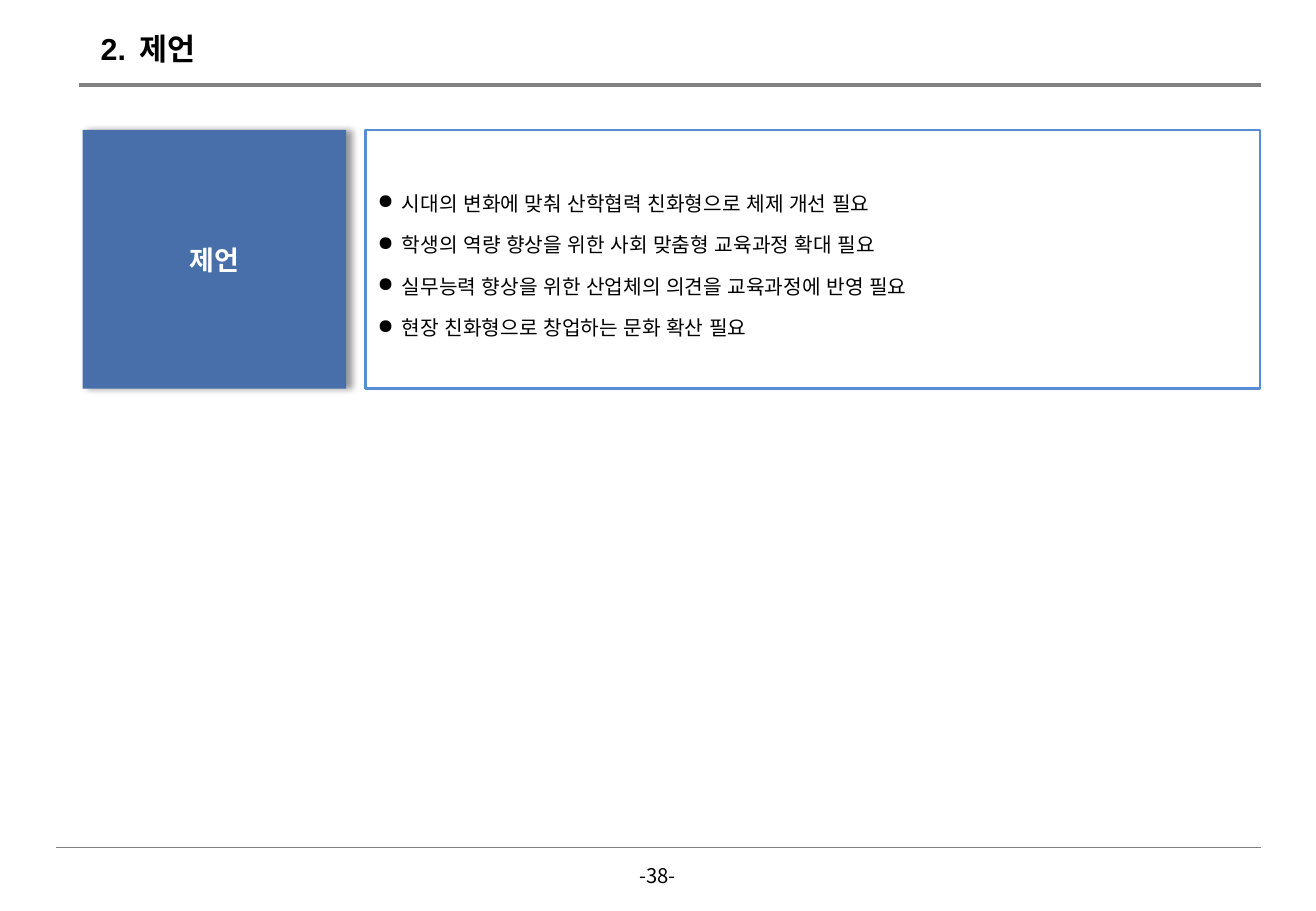
from lxml import etree
from pptx import Presentation
from pptx.dml.color import RGBColor
from pptx.enum.shapes import MSO_CONNECTOR as Line, MSO_SHAPE as Shape
from pptx.enum.text import MSO_ANCHOR as Anchor, PP_ALIGN as Align
from pptx.oxml.ns import qn
from pptx.util import Inches, Pt

BLACK = RGBColor(0, 0, 0)
WHITE = RGBColor(0xFF, 0xFF, 0xFF)
GRAY = RGBColor(0x80, 0x80, 0x80)
BLUE = RGBColor(0x48, 0x6F, 0xAA)
EDGE = RGBColor(0x55, 0x8E, 0xD5)
SANS = "Arial"
HANGUL = "Noto Sans CJK KR"
RIGHT = 10.38

POINTS = [
    "시대의 변화에 맞춰 산학협력 친화형으로 체제 개선 필요",
    "학생의 역량 향상을 위한 사회 맞춤형 교육과정 확대 필요",
    "실무능력 향상을 위한 산업체의 의견을 교육과정에 반영 필요",
    "현장 친화형으로 창업하는 문화 확산 필요",
]


def node(parent, tag, **attrs):
    return etree.SubElement(parent, qn(tag), attrs)


def write(frame, text, size=12, color=BLACK, bold=False, font=SANS,
          align=Align.LEFT, anchor=Anchor.TOP, bullet=None, tab=None,
          spacing=None, before=0):
    """Fill a frame, one paragraph for each line of text."""
    frame.word_wrap = True
    frame.vertical_anchor = anchor
    for i, words in enumerate(text.split("\n")):
        para = frame.paragraphs[0] if i == 0 else frame.add_paragraph()
        para.alignment = align
        para.line_spacing = spacing
        para.space_before = Pt(before if i else 0)
        props = para._p.get_or_add_pPr()
        if bullet:
            props.set("marL", str(Inches(0.2)))
            props.set("indent", str(Inches(-0.2)))
            node(props, "a:buChar", char=bullet)
        if tab:
            stops = node(props, "a:tabLst")
            node(stops, "a:tab", pos=str(Inches(tab)), algn="l")
        run = para.add_run()
        run.text = words
        run.font.size = Pt(size)
        run.font.bold = bold
        run.font.name = font
        run.font.color.rgb = color
        node(run._r.get_or_add_rPr(), "a:ea", typeface=font)


def label(slide, x, y, w, h, text, **style):
    box = slide.shapes.add_textbox(*map(Inches, (x, y, w, h)))
    write(box.text_frame, text, **style)


def rule(slide, x, y, width):
    """Draw a level gray line from x to the right margin."""
    line = slide.shapes.add_connector(
        Line.STRAIGHT, Inches(x), Inches(y), Inches(RIGHT), Inches(y))
    line.line.color.rgb = GRAY
    line.line.width = Pt(width)
    node(line._element.spPr, "a:effectLst")


def panel(slide, x, y, w, h, fill=None, edge=None):
    box = slide.shapes.add_shape(Shape.RECTANGLE, *map(Inches, (x, y, w, h)))
    box.shadow.inherit = False
    if fill is None:
        box.fill.background()
    else:
        box.fill.solid()
        box.fill.fore_color.rgb = fill
    if edge is None:
        box.line.fill.background()
    else:
        box.line.color.rgb = edge
        box.line.width = Pt(1.5)
    return box


def shade(box):
    """Cast a soft shadow to the right."""
    effects = box._element.spPr.find(qn("a:effectLst"))
    cast = node(effects, "a:outerShdw", blurRad=str(Pt(4)), dist=str(Pt(3)),
                dir="0", algn="l", rotWithShape="0")
    tint = node(cast, "a:srgbClr", val=str(BLACK))
    node(tint, "a:alpha", val="40000")


def header(slide, x, y):
    label(slide, x + 0.08, y, 2, 0.4, "2.\t제언", size=18, bold=True, tab=0.32)
    rule(slide, x, y + 0.5, 2)


def advice(slide, x, y, w, h):
    """Place the heading block and the list beside it."""
    side, gap = 2.17, 0.16
    head = panel(slide, x, y, side, h, fill=BLUE)
    shade(head)
    write(head.text_frame, "제언", size=16, color=WHITE, bold=True,
          align=Align.CENTER, anchor=Anchor.MIDDLE)
    left = x + side + gap
    body = panel(slide, left, y, x + w - left, h, edge=EDGE)
    write(body.text_frame, "\n".join(POINTS), anchor=Anchor.MIDDLE,
          bullet="●", spacing=1.5, before=3)


def footer(slide, x, y):
    rule(slide, x, y, 0.5)
    w = 0.8
    label(slide, (x + RIGHT - w) / 2 - 0.01, y + 0.08, w, 0.3, "-38-",
          font=HANGUL, align=Align.CENTER)


def main():
    deck = Presentation()
    deck.slide_width = Inches(10.83)
    deck.slide_height = Inches(7.5)
    slide = deck.slides.add_slide(deck.slide_layouts[6])
    header(slide, 0.65, 0.2)
    advice(slide, 0.68, 1.07, 9.69, 2.13)
    footer(slide, 0.46, 6.98)
    deck.save("out.pptx")


if __name__ == "__main__":
    main()
